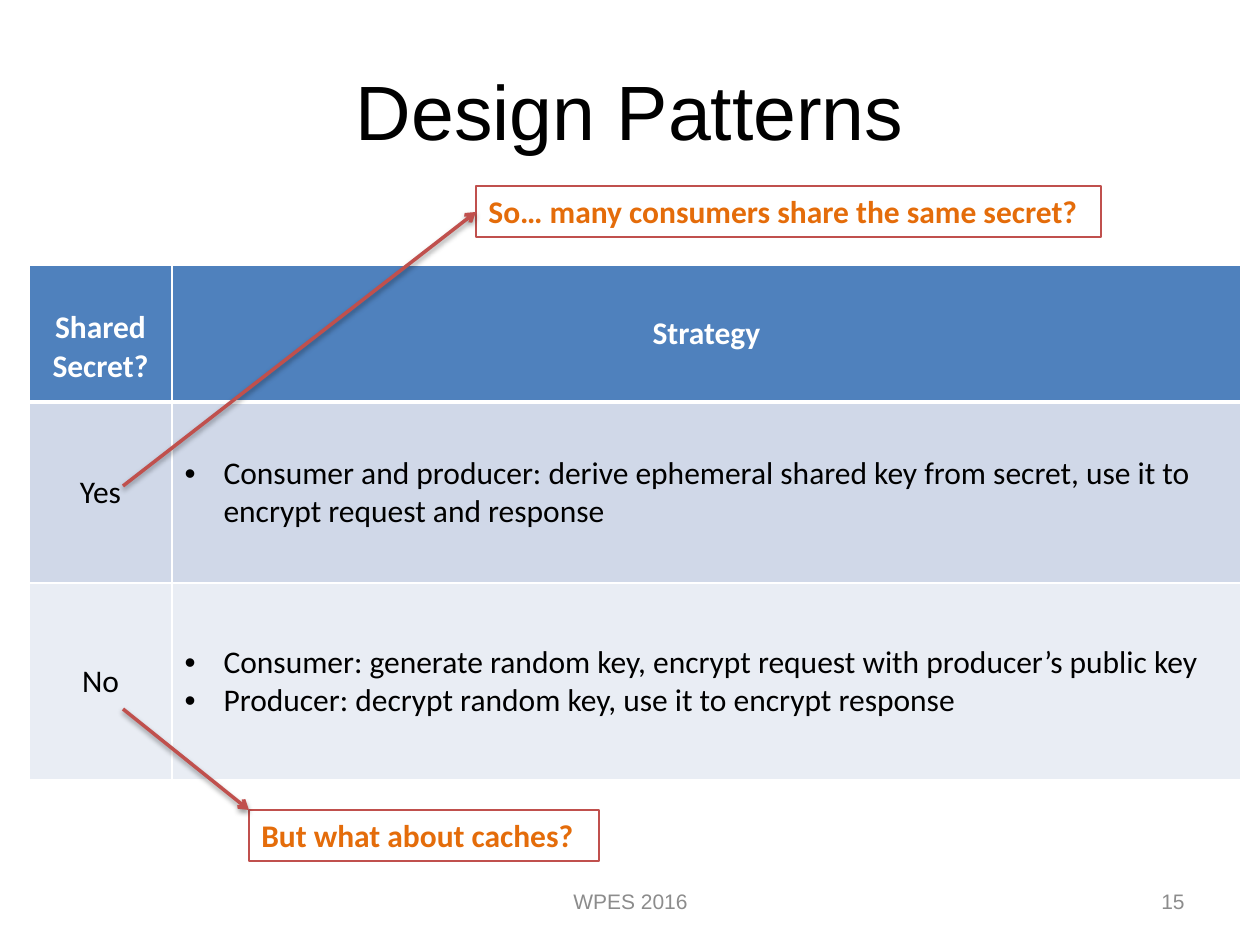
"""Build the Design Patterns slide: a strategy table with two annotated callouts."""
from lxml import etree
from pptx import Presentation
from pptx import util as u
from pptx.dml.color import RGBColor
from pptx.enum import shapes, text
from pptx.oxml import parse_xml
from pptx.oxml.ns import nsdecls, qn

COLORS = {
    "black": "000000", "white": "FFFFFF", "gray": "8C8C8C", "header": "4F81BD",
    "yes": "D0D8E8", "no": "E9EDF4", "red": "C0504D", "orange": "E46C0A",
}
ALIGN = text.PP_ALIGN
MIDDLE = text.MSO_ANCHOR.MIDDLE


def px(*lengths):
    return [u.Emu(round(length * 914400 / 126)) for length in lengths]


def add_run(paragraph, words, size, font, color, bold=False):
    run = paragraph.add_run()
    run.text = words
    run.font.size = u.Pt(size)
    run.font.name = font
    run.font.bold = bold
    run.font.color.rgb = RGBColor.from_string(COLORS[color])


presentation = Presentation()
presentation.slide_width, presentation.slide_height = px(1260, 945)
slide = presentation.slides.add_slide(presentation.slide_layouts[5])

title = slide.shapes.title
title.left, title.top, title.width, title.height = px(63, 50, 1134, 158)
frame = title.text_frame
frame.auto_size = text.MSO_AUTO_SIZE.NONE
frame.vertical_anchor = text.MSO_ANCHOR.TOP
frame.margin_top = px(14)[0]
frame.paragraphs[0].alignment = ALIGN.CENTER
add_run(frame.paragraphs[0], "Design Patterns", 44, "Arial", "black")

for left, width, words, alignment in [
    (431, 399, "WPES 2016", ALIGN.CENTER),
    (903, 294, "15", ALIGN.RIGHT),
]:
    footer = slide.shapes.add_textbox(*px(left, 876, width, 50))
    footer.text_frame.word_wrap = True
    footer.text_frame.vertical_anchor = MIDDLE
    footer.text_frame.paragraphs[0].alignment = alignment
    add_run(footer.text_frame.paragraphs[0], words, 12, "Arial", "gray")

rows = [
    ("header", 137, "Shared Secret?", ["Strategy"]),
    ("yes", 181, "Yes", [
        "Consumer and producer: derive ephemeral shared key from secret, "
        "use it to encrypt request and response",
    ]),
    ("no", 197, "No", [
        "Consumer: generate random key, encrypt request with producer’s public key",
        "Producer: decrypt random key, use it to encrypt response",
    ]),
]
table = slide.shapes.add_table(3, 2, *px(29, 265, 1212, 515)).table
for column, width in zip(table.columns, px(143, 1069)):
    column.width = width
for row_index, (fill, height, label, strategies) in enumerate(rows):
    table.rows[row_index].height = px(height)[0]
    is_header = row_index == 0
    for column_index, lines in enumerate([[label], strategies]):
        cell = table.cell(row_index, column_index)
        cell.vertical_anchor = MIDDLE
        for side in "LRTB":
            thick = (row_index, side) in [(0, "B"), (1, "T")]
            cell._tc.get_or_add_tcPr().append(parse_xml(
                f'<a:ln{side} {nsdecls("a")} w="{u.Pt(3 if thick else 1)}"><a:solidFill>'
                f'<a:srgbClr val="{COLORS["white"]}"/></a:solidFill></a:ln{side}>'))
        cell.fill.solid()
        cell.fill.fore_color.rgb = RGBColor.from_string(COLORS[fill])
        for line_index, words in enumerate(lines):
            frame = cell.text_frame
            paragraph = frame.add_paragraph() if line_index else frame.paragraphs[0]
            if is_header or column_index == 0:
                paragraph.alignment = ALIGN.CENTER
            else:
                properties = paragraph._p.get_or_add_pPr()
                properties.set("marL", str(px(39)[0]))
                properties.set("indent", str(px(-39)[0]))
                etree.SubElement(properties, qn("a:buFont")).set("typeface", "Arial")
                etree.SubElement(properties, qn("a:buChar")).set("char", "•")
            color = "white" if is_header else "black"
            add_run(paragraph, words, 18, "Calibri", color, is_header)
header_label = table.cell(0, 0)
header_label.vertical_anchor = text.MSO_ANCHOR.TOP
header_label.margin_top = px(44)[0]

for box, arrow, words in [
    ((476, 186, 625, 51), (123, 486, 476, 212), "So… many consumers share the same secret?"),
    ((249, 810, 350, 51), (123, 709, 249, 810), "But what about caches?"),
]:
    callout = slide.shapes.add_shape(shapes.MSO_SHAPE.RECTANGLE, *px(*box))
    callout.shadow.inherit = False
    callout.fill.background()
    callout.line.color.rgb = RGBColor.from_string(COLORS["red"])
    callout.line.width = u.Pt(0.75)
    callout.text_frame.word_wrap = True
    callout.text_frame.vertical_anchor = text.MSO_ANCHOR.TOP
    callout.text_frame.paragraphs[0].alignment = ALIGN.LEFT
    add_run(callout.text_frame.paragraphs[0], words, 18, "Calibri", "orange", True)

    connector = slide.shapes.add_connector(shapes.MSO_CONNECTOR.STRAIGHT, *px(*arrow))
    connector.line.color.rgb = RGBColor.from_string(COLORS["red"])
    connector.line.width = u.Pt(2)
    etree.SubElement(connector.line._get_or_add_ln(), qn("a:tailEnd")).set("type", "arrow")
    connector._element.spPr.append(parse_xml(
        f'<a:effectLst {nsdecls("a")}><a:outerShdw blurRad="{u.Pt(3.1)}" dist="{u.Pt(1.6)}" '
        f'dir="5400000" rotWithShape="0"><a:srgbClr val="{COLORS["black"]}">'
        '<a:alpha val="38000"/></a:srgbClr></a:outerShdw></a:effectLst>'))

presentation.save("out.pptx")
